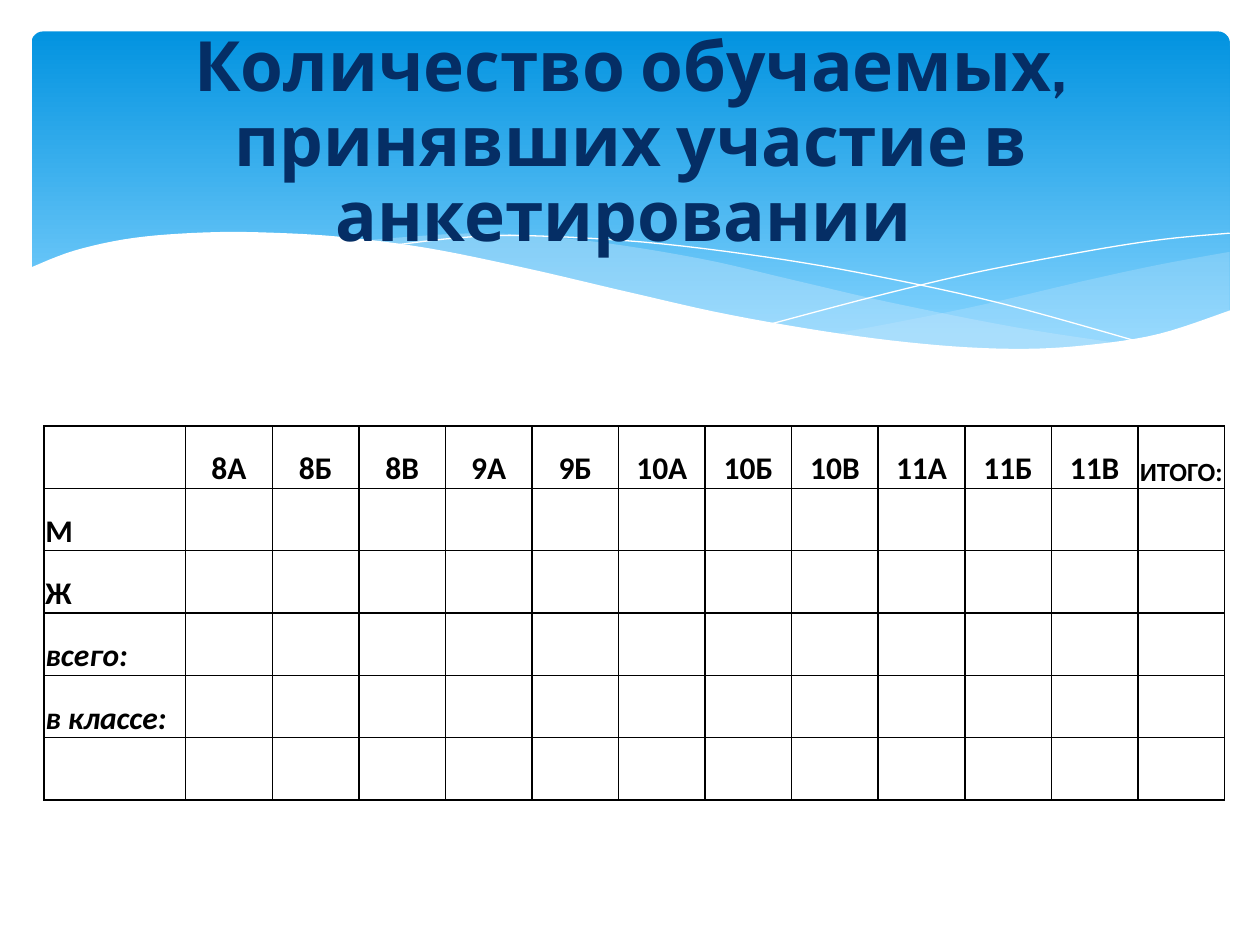
from collections import namedtuple

from lxml.etree import SubElement
from pptx import Presentation
from pptx.dml.color import RGBColor
from pptx.enum.shapes import MSO_SHAPE
from pptx.enum.text import MSO_ANCHOR, MSO_AUTO_SIZE, PP_ALIGN
from pptx.oxml.ns import qn
from pptx.util import Inches, Pt

HUES = {"deep": "0293E0", "sky": "83D3FE", "mist": "C6E7FC",
        "white": "FFFFFF", "navy": "052E65", "black": "000000"}
Box = namedtuple("Box", "x y w h")

# Wave knots, in percent of the band
TAIL_TOP = [(100, 64.8), (94.2, 68.5), (87.9, 73.3), (79.3, 80.4),
            (71.6, 85.9), (66.9, 88.9)]
TAIL_LOW = [(66.9, 88.9), (73, 91.5), (79.5, 93.3), (85.2, 93.3),
            (90.9, 91.5), (95.7, 87.8), (100, 82.2)]
SWELL_TOP = [(91.3, 91.9), (82.2, 87), (71.6, 79.6), (63.5, 73),
             (55.7, 66.7), (46.3, 61.5), (37.3, 59.3), (27.4, 61.5)]
SWELL_LOW = [(27.4, 61.5), (35.4, 65.9), (44.6, 73), (53.1, 79.6),
             (62.4, 86.3), (70.5, 90.7), (77.4, 93.3), (84.4, 93.7),
             (91.3, 91.9)]
FALL = [(29.9, 63), (35.5, 60.7), (41.1, 60), (51, 61.9), (61.3, 66.3),
        (70.5, 71.9), (81, 80), (92.7, 91.5)]
RISE = [(61.8, 85.9), (70.5, 77.8), (79, 70.7), (88.4, 64.4),
        (94.5, 61.1), (100, 59.3)]
SHORE = [(100.1, 81.9), (94.1, 88.9), (88.1, 92.2), (82.4, 93.3),
         (75.6, 92.2), (67.6, 88.9), (58.3, 83.3), (50.3, 77),
         (41.3, 69.6), (33.1, 63.7), (25.9, 60.4), (19.6, 59.1),
         (14.3, 59.1), (8.5, 60.7), (3.6, 64.4), (-0.2, 69.6)]
FLOOR = [(-0.2, 112.6), (100.1, 112.6)]

HEADS = ["8А", "8Б", "8В", "9А", "9Б", "10А", "10Б", "10В",
         "11А", "11Б", "11В", "ИТОГО:"]
SIDES = ["М", "Ж", "всего:", "в классе:", ""]


def hue(name):
    return RGBColor.from_string(HUES[name])


def share(box, x, y, w, h):
    """Box given in percent of another box."""
    return Box(int(box.x + box.w * x / 100), int(box.y + box.h * y / 100),
               int(box.w * w / 100), int(box.h * h / 100))


def smooth(knots, steps=6):
    """Catmull-Rom curve through the knots."""
    ends = [knots[0], *knots, knots[-1]]
    dots = [knots[0]]
    for a, b, c, d in zip(ends, ends[1:], ends[2:], ends[3:]):
        for step in range(1, steps + 1):
            t = step / steps
            dots.append(tuple(
                (2 * q + (r - p) * t + (2 * p - 5 * q + 4 * r - s) * t ** 2
                 + (3 * q - p - 3 * r + s) * t ** 3) / 2
                for p, q, r, s in zip(a, b, c, d)))
    return dots


def wave(slide, box, dots, fill=None, alpha=None):
    """Filled area, or a white hairline if there is no fill."""
    spots = [share(box, x, y, 0, 0)[:2] for x, y in dots]
    pen = slide.shapes.build_freeform(*spots[0])
    pen.add_line_segments(spots[1:], close=bool(fill))
    shape = pen.convert_to_shape()
    shape.shadow.inherit = False
    if not fill:
        shape.fill.background()
        shape.line.color.rgb = hue("white")
        shape.line.width = Pt(0)
        return
    shape.line.fill.background()
    shape.fill.solid()
    shape.fill.fore_color.rgb = hue(fill)
    if alpha:
        tone = shape._element.spPr.find(".//" + qn("a:srgbClr"))
        SubElement(tone, qn("a:alpha")).set("val", str(alpha * 1000))


def add_band(slide, box):
    # Blue gradient panel
    panel = slide.shapes.add_shape(MSO_SHAPE.ROUNDED_RECTANGLE, *box)
    panel.adjustments[0] = 0.034
    panel.shadow.inherit = False
    panel.line.fill.background()
    panel.fill.gradient()
    panel.fill.gradient_angle = 270
    for stop, name, pos in zip(panel.fill.gradient_stops,
                               ("deep", "sky"), (0, 0.9)):
        stop.color.rgb = hue(name)
        stop.position = pos
    # Waves
    wave(slide, box, smooth(TAIL_TOP) + smooth(TAIL_LOW), "mist", 29)
    wave(slide, box, smooth(SWELL_TOP) + smooth(SWELL_LOW), "mist", 40)
    wave(slide, box, smooth(FALL))
    wave(slide, box, smooth(RISE))
    wave(slide, box, smooth(SHORE) + FLOOR, "white")


def write(para, text, font, size, color, italic=None):
    run = para.add_run()
    run.text = text
    run.font.name, run.font.size = font, Pt(size)
    run.font.bold, run.font.italic = True, italic
    run.font.color.rgb = hue(color)


def add_title(slide, box):
    title = slide.shapes.title
    title.left, title.top, title.width, title.height = box
    slide.shapes._spTree.append(title._element)  # in front of the band
    frame = title.text_frame
    frame.word_wrap = True
    frame.auto_size = MSO_AUTO_SIZE.NONE
    frame.vertical_anchor = MSO_ANCHOR.MIDDLE
    para = frame.paragraphs[0]
    para.alignment = PP_ALIGN.CENTER
    para.line_spacing = 0.9
    write(para, "Количество обучаемых, принявших участие в анкетировании ",
          "Cabin", 39.6, "navy")


def style(cell):
    """Clear fill, tight margins and a thin black border."""
    cell.margin_left = cell.margin_right = cell.margin_top = Inches(0.01)
    cell.margin_bottom = 0
    cell.vertical_anchor = MSO_ANCHOR.BOTTOM
    props = cell._tc.get_or_add_tcPr()
    for side in ("lnL", "lnR", "lnT", "lnB"):
        edge = SubElement(props, qn("a:" + side), w=str(Pt(1)))
        paint = SubElement(edge, qn("a:solidFill"))
        SubElement(paint, qn("a:srgbClr"), val=HUES["black"])
    cell.fill.background()


def add_grid(slide, box):
    rows, cols = len(SIDES) + 1, len(HEADS) + 1
    grid = slide.shapes.add_table(rows, cols, *box).table
    first = int(box.w * 0.12)
    for n, col in enumerate(grid.columns):
        col.width = (box.w - first) // len(HEADS) if n else first
    for row in grid.rows:
        row.height = box.h // rows
    for cell in grid.iter_cells():
        style(cell)
    # Class names
    for n, text in enumerate(HEADS, 1):
        para = grid.cell(0, n).text_frame.paragraphs[0]
        para.alignment = PP_ALIGN.CENTER
        write(para, text, "Calibri", 15 if n == len(HEADS) else 18, "black")
    # Row names, sums in italics
    for n, text in enumerate(SIDES, 1):
        if text:
            write(grid.cell(n, 0).text_frame.paragraphs[0], text,
                  "Calibri", 18, "black", text.endswith(":"))


def main():
    deck = Presentation()
    deck.slide_width, deck.slide_height = Inches(10), Inches(7.5)
    page = Box(0, 0, deck.slide_width, deck.slide_height)
    slide = deck.slides.add_slide(deck.slide_layouts[5])
    add_band(slide, share(page, 2.5, 3.33, 95.1, 36))
    add_title(slide, share(page, 5.1, 6.93, 90, 16.67))
    add_grid(slide, share(page, 3.5, 45.07, 93.7, 39.6))
    deck.save("out.pptx")


if __name__ == "__main__":
    main()
